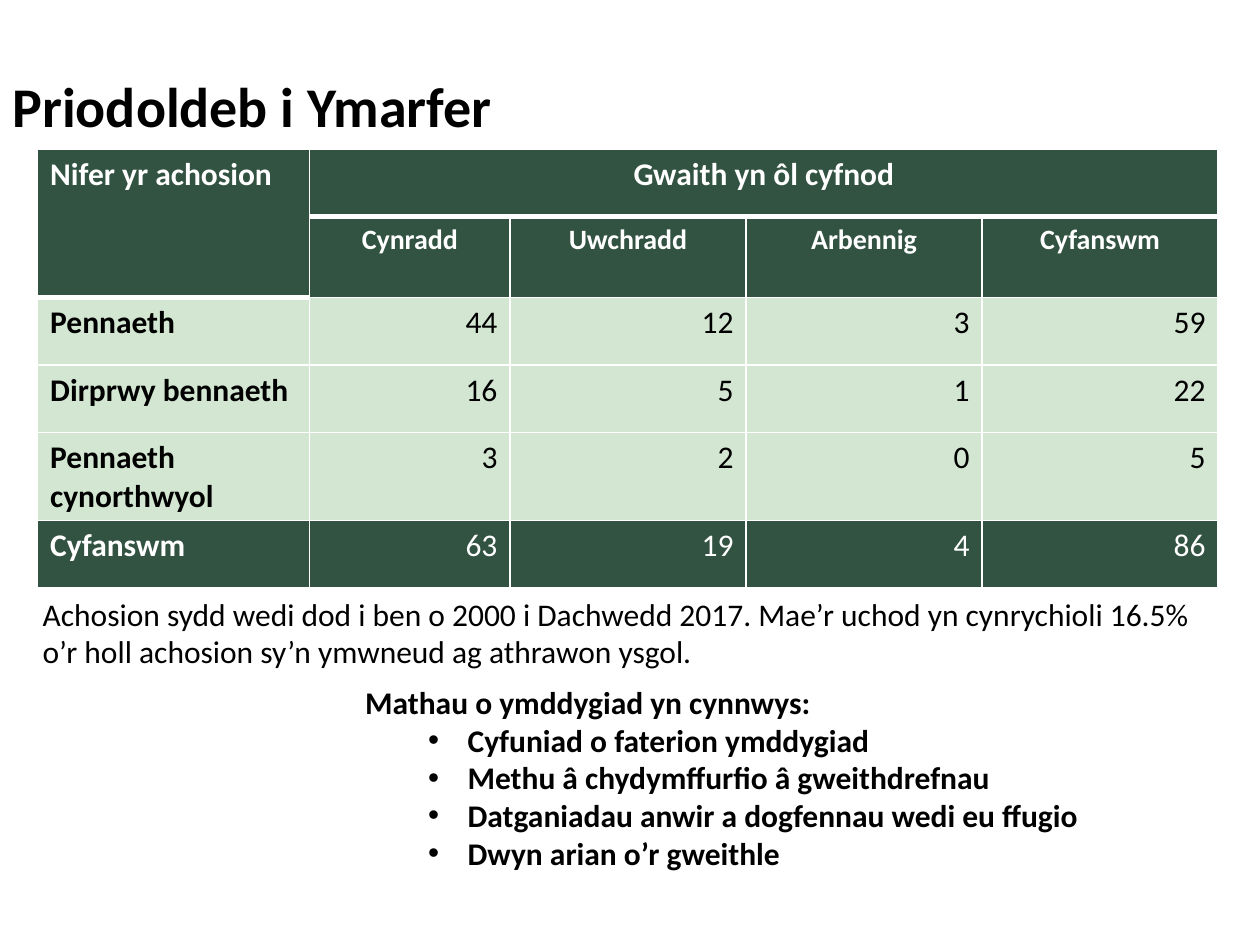
from lxml import etree
from pptx import Presentation
from pptx.dml.color import RGBColor
from pptx.enum.text import MSO_ANCHOR, MSO_AUTO_SIZE, PP_ALIGN
from pptx.oxml.ns import qn
from pptx.util import Pt

LEFT, CENTER, RIGHT = PP_ALIGN.LEFT, PP_ALIGN.CENTER, PP_ALIGN.RIGHT
MIDDLE = MSO_ANCHOR.MIDDLE
GROW = MSO_AUTO_SIZE.SHAPE_TO_FIT_TEXT
COLORS = {"dark": "335342", "light": "D2E6D2", "white": "FFFFFF", "black": "000000"}


def write(p, text, size=18, bold=False, color="black", align=LEFT, bullet=False):
    p.alignment = align
    if bullet:
        p.level = 1
        pPr = p._p.get_or_add_pPr()
        pPr.set("marL", str(Pt(58.5)))
        pPr.set("indent", str(Pt(-22.5)))
        etree.SubElement(pPr, qn("a:buFont"), typeface="Arial")
        etree.SubElement(pPr, qn("a:buChar"), char="•")
    r = p.add_run()
    r.text = text
    r.font.name = "Calibri"
    r.font.size = Pt(size)
    r.font.bold = bold
    r.font.color.rgb = RGBColor.from_string(COLORS[color])


def add_border(cell, side, width):
    ln = etree.SubElement(cell._tc.get_or_add_tcPr(), qn(f"a:ln{side}"), w=str(Pt(width)))
    fill = etree.SubElement(ln, qn("a:solidFill"))
    etree.SubElement(fill, qn("a:srgbClr"), val=COLORS["white"])


prs = Presentation()
prs.slide_width, prs.slide_height = Pt(720), Pt(540)
s = prs.slides.add_slide(prs.slide_layouts[6])

title = s.shapes.add_textbox(Pt(0), Pt(26), Pt(578), Pt(90))
tf = title.text_frame
tf.word_wrap = True
tf.vertical_anchor = MIDDLE
tf.margin_bottom = Pt(25)
write(tf.paragraphs[0], "Priodoldeb i Ymarfer", size=32, bold=True)

rows = [
    ["Nifer yr achosion", "Gwaith yn ôl cyfnod", "", "", ""],
    ["", "Cynradd", "Uwchradd", "Arbennig", "Cyfanswm"],
    ["Pennaeth", "44", "12", "3", "59"],
    ["Dirprwy bennaeth", "16", "5", "1", "22"],
    ["Pennaeth cynorthwyol", "3", "2", "0", "5"],
    ["Cyfanswm", "63", "19", "4", "86"],
]
widths = [155.5, 114.5, 134.9, 134.9, 134.9]
heights = [38.6, 46.3, 38.6, 38.6, 38.6, 38.6]
table = s.shapes.add_table(
    len(rows), len(widths), Pt(21.5), Pt(85), Pt(sum(widths)), Pt(sum(heights))
).table
for column, width in zip(table.columns, widths):
    column.width = Pt(width)
for row, height in zip(table.rows, heights):
    row.height = Pt(height)
table.cell(0, 0).merge(table.cell(1, 0))
table.cell(0, 1).merge(table.cell(0, 4))

heavy_tops = {(1, c) for c in range(5)} | {(2, 0)}
for i, values in enumerate(rows):
    header = i < 2
    dark = header or i == len(rows) - 1
    for j, text in enumerate(values):
        cell = table.cell(i, j)
        add_border(cell, "L", 1)
        add_border(cell, "R", 1)
        add_border(cell, "T", 3 if (i, j) in heavy_tops else 1)
        add_border(cell, "B", 3 if (i + 1, j) in heavy_tops else 1)
        cell.fill.solid()
        cell.fill.fore_color.rgb = RGBColor.from_string(COLORS["dark" if dark else "light"])
        if text:
            write(
                cell.text_frame.paragraphs[0],
                text,
                size=16 if i == 1 else 18,
                bold=header or j == 0,
                color="white" if dark else "black",
                align=LEFT if j == 0 else CENTER if header else RIGHT,
            )

behaviours = s.shapes.add_textbox(Pt(201.6), Pt(386.6), Pt(510.5), Pt(116.6))
tf = behaviours.text_frame
tf.word_wrap = True
tf.auto_size = GROW
write(tf.paragraphs[0], "Mathau o ymddygiad yn cynnwys:", bold=True)
for text in [
    "Cyfuniad o faterion ymddygiad",
    "Methu â chydymffurfio â gweithdrefnau",
    "Datganiadau anwir a dogfennau wedi eu ffugio",
    "Dwyn arian o’r gweithle",
]:
    write(tf.add_paragraph(), text, bold=True, bullet=True)

note = s.shapes.add_textbox(Pt(17.3), Pt(336.2), Pt(683.3), Pt(51))
tf = note.text_frame
tf.word_wrap = True
tf.auto_size = GROW
write(
    tf.paragraphs[0],
    "Achosion sydd wedi dod i ben o 2000 i Dachwedd 2017. Mae’r uchod yn cynrychioli "
    "16.5% o’r holl achosion sy’n ymwneud ag athrawon ysgol.",
)

prs.save("out.pptx")
